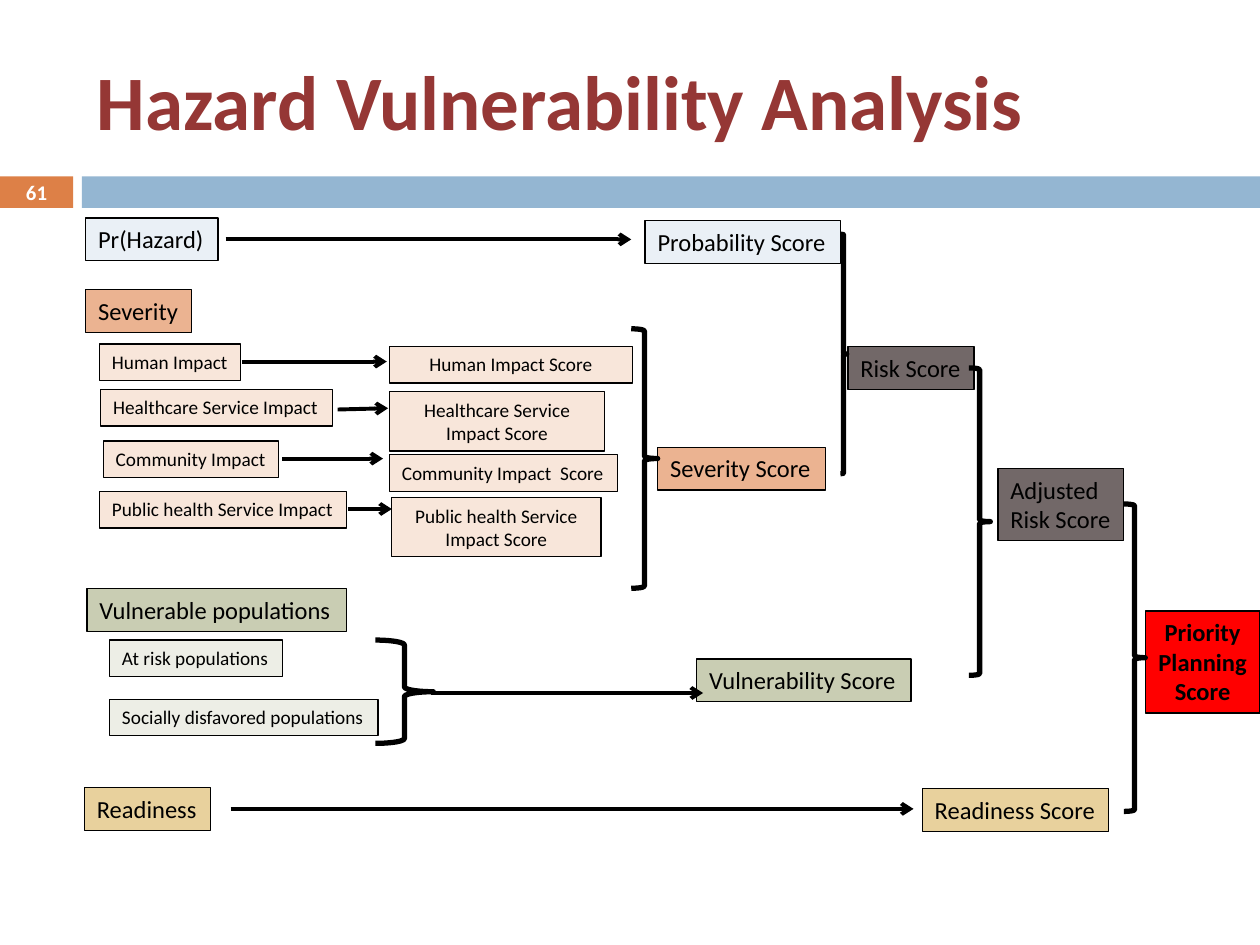
from typing import NamedTuple, Optional

from lxml import etree
from pptx import Presentation
from pptx.dml.color import RGBColor
from pptx.enum.shapes import MSO_CONNECTOR, MSO_SHAPE
from pptx.enum.text import MSO_ANCHOR, MSO_AUTO_SIZE, PP_ALIGN
from pptx.oxml.ns import qn
from pptx.util import Inches, Pt

STRAIGHT = MSO_CONNECTOR.STRAIGHT
RECTANGLE, RIGHT_BRACE = MSO_SHAPE.RECTANGLE, MSO_SHAPE.RIGHT_BRACE
TOP, MIDDLE = MSO_ANCHOR.TOP, MSO_ANCHOR.MIDDLE
LEFT, CENTER = PP_ALIGN.LEFT, PP_ALIGN.CENTER
GROW, FIXED = MSO_AUTO_SIZE.SHAPE_TO_FIT_TEXT, MSO_AUTO_SIZE.NONE

BLACK = RGBColor(0x00, 0x00, 0x00)
WHITE = RGBColor(0xFF, 0xFF, 0xFF)
MAROON = RGBColor(0x95, 0x37, 0x35)
ORANGE = RGBColor(0xDD, 0x80, 0x47)
BLUE = RGBColor(0x94, 0xB6, 0xD2)
PALE_BLUE = RGBColor(0xEA, 0xF0, 0xF6)
SALMON = RGBColor(0xEB, 0xB3, 0x91)
PALE_SALMON = RGBColor(0xF8, 0xE6, 0xDA)
SAGE = RGBColor(0xC9, 0xCD, 0xB3)
PALE_SAGE = RGBColor(0xED, 0xEE, 0xE6)
SAND = RGBColor(0xE8, 0xD1, 0x9D)
GRAY = RGBColor(0x72, 0x68, 0x68)
RED = RGBColor(0xFF, 0x00, 0x00)

FONT = "Calibri"
MAIN_SIZE, DETAIL_SIZE = 14, 11
MAIN_HEIGHT, DETAIL_HEIGHT, TWO_LINE_HEIGHT = 0.34, 0.29, 0.47


class Box(NamedTuple):
    text: str
    left: float
    top: float
    width: float
    fill: RGBColor
    height: float = MAIN_HEIGHT
    size: float = MAIN_SIZE
    centered: bool = False
    bold: bool = False


class Brace(NamedTuple):
    left: float
    top: float
    width: float
    height: float


class Arrow(NamedTuple):
    start: float
    end: float
    y: float
    end_y: Optional[float] = None


def detail(text: str, left: float, top: float, width: float, fill: RGBColor = PALE_SALMON,
           height: float = DETAIL_HEIGHT, centered: bool = False) -> Box:
    """Describe a small box that breaks a main box down."""
    return Box(text, left, top, width, fill, height, DETAIL_SIZE, centered)


BOXES = [
    Box("Pr(Hazard)", 0.68, 1.73, 1.05, PALE_BLUE),
    Box("Severity", 0.68, 2.3, 0.84, SALMON),
    Box("Vulnerable populations", 0.69, 4.67, 2.06, SAGE),
    Box("Readiness", 0.67, 6.25, 1, SAND),
    detail("Human Impact", 0.79, 2.73, 1.12),
    detail("Healthcare Service Impact", 0.8, 3.09, 1.84),
    detail("Community Impact", 0.82, 3.5, 1.39),
    detail("Public health Service Impact", 0.79, 3.9, 1.96),
    detail("At risk populations", 0.87, 5.08, 1.37, PALE_SAGE),
    detail("Socially disfavored populations", 0.87, 5.55, 2.13, PALE_SAGE),
    detail("Human Impact Score", 3.09, 2.75, 1.93, centered=True),
    detail("Healthcare Service Impact Score", 3.09, 3.11, 1.71,
           height=TWO_LINE_HEIGHT, centered=True),
    detail("Community Impact  Score", 3.09, 3.61, 1.81),
    detail("Public health Service Impact Score", 3.11, 3.95, 1.66,
           height=TWO_LINE_HEIGHT, centered=True),
    Box("Probability Score", 5.12, 1.75, 1.55, PALE_BLUE),
    Box("Severity Score", 5.22, 3.55, 1.33, SALMON),
    Box("Risk Score", 6.73, 2.75, 1, GRAY),
    Box("Vulnerability Score", 5.53, 5.23, 1.7, SAGE),
    Box("Adjusted\nRisk Score", 7.92, 3.72, 1, GRAY, height=0.57),
    Box("Readiness Score", 7.32, 6.26, 1.48, SAND),
    Box("Priority Planning Score", 9.09, 4.85, 0.91, RED, height=0.81,
        centered=True, bold=True),
]

BRACES = [
    Brace(5.01, 2.61, 0.21, 2.06),
    Brace(6.67, 1.86, 0.05, 1.9),
    Brace(2.98, 5.08, 0.46, 0.82),
    Brace(7.69, 2.92, 0.17, 2.44),
    Brace(8.92, 4, 0.17, 2.44),
]

ARROWS = [
    Arrow(1.79, 5.01, 1.9),
    Arrow(1.92, 3.07, 2.87),
    Arrow(2.68, 3.08, 3.25, 3.24),
    Arrow(2.24, 3.04, 3.64),
    Arrow(2.76, 3.11, 4.04),
    Arrow(3.42, 5.58, 5.5),
    Arrow(1.83, 7.25, 6.42),
]


def add_text(slide, text: str, left: float, top: float, width: float, height: float, *,
             size: float, color: RGBColor = BLACK, bold: bool = False, align=LEFT,
             anchor=TOP, wrap: bool = True, auto_size=FIXED):
    shape = slide.shapes.add_textbox(Inches(left), Inches(top), Inches(width), Inches(height))
    frame = shape.text_frame
    frame.text = text
    frame.word_wrap = wrap
    frame.auto_size = auto_size
    frame.vertical_anchor = anchor
    for paragraph in frame.paragraphs:
        paragraph.alignment = align
        font = paragraph.runs[0].font
        font.name, font.size, font.bold = FONT, Pt(size), bold
        font.color.rgb = color
    return shape


def add_bar(slide, left: float, width: float, color: RGBColor) -> None:
    bar = slide.shapes.add_shape(RECTANGLE, Inches(left), Inches(1.4), Inches(width), Inches(0.25))
    bar.shadow.inherit = False
    bar.fill.solid()
    bar.fill.fore_color.rgb = color
    bar.line.fill.background()


def add_box(slide, box: Box) -> None:
    shape = add_text(slide, box.text, box.left, box.top, box.width, box.height,
                     size=box.size, bold=box.bold, align=CENTER if box.centered else LEFT,
                     wrap=box.centered, auto_size=GROW)
    shape.fill.solid()
    shape.fill.fore_color.rgb = box.fill
    shape.line.color.rgb = BLACK
    shape.line.width = Pt(0.75)


def add_brace(slide, brace: Brace) -> None:
    shape = slide.shapes.add_shape(RIGHT_BRACE, *(Inches(length) for length in brace))
    shape.shadow.inherit = False
    shape.fill.background()
    shape.line.color.rgb = BLACK
    shape.line.width = Pt(3)


def add_arrow(slide, arrow: Arrow) -> None:
    end_y = arrow.y if arrow.end_y is None else arrow.end_y
    connector = slide.shapes.add_connector(STRAIGHT, Inches(arrow.start), Inches(arrow.y),
                                           Inches(arrow.end), Inches(end_y))
    connector.line.color.rgb = BLACK
    connector.line.width = Pt(2.25)
    properties = connector._element.spPr
    etree.SubElement(properties.find(qn("a:ln")), qn("a:tailEnd"), type="arrow")
    etree.SubElement(properties, qn("a:effectLst"))


def main() -> None:
    presentation = Presentation()
    presentation.slide_width, presentation.slide_height = Inches(10), Inches(7.5)
    slide = presentation.slides.add_slide(presentation.slide_layouts[6])

    add_bar(slide, 0, 0.58, ORANGE)
    add_bar(slide, 0.65, 9.35, BLUE)
    add_text(slide, "Hazard Vulnerability Analysis", 0.67, 0.25, 8.92, 1.08,
             size=44, color=MAROON, bold=True, anchor=MIDDLE)
    add_text(slide, "61", 0, 1.39, 0.58, 0.27,
             size=11.9, color=WHITE, bold=True, align=CENTER, anchor=MIDDLE)

    for box in BOXES:
        add_box(slide, box)
    for brace in BRACES:
        add_brace(slide, brace)
    for arrow in ARROWS:
        add_arrow(slide, arrow)

    presentation.save("out.pptx")


if __name__ == "__main__":
    main()
